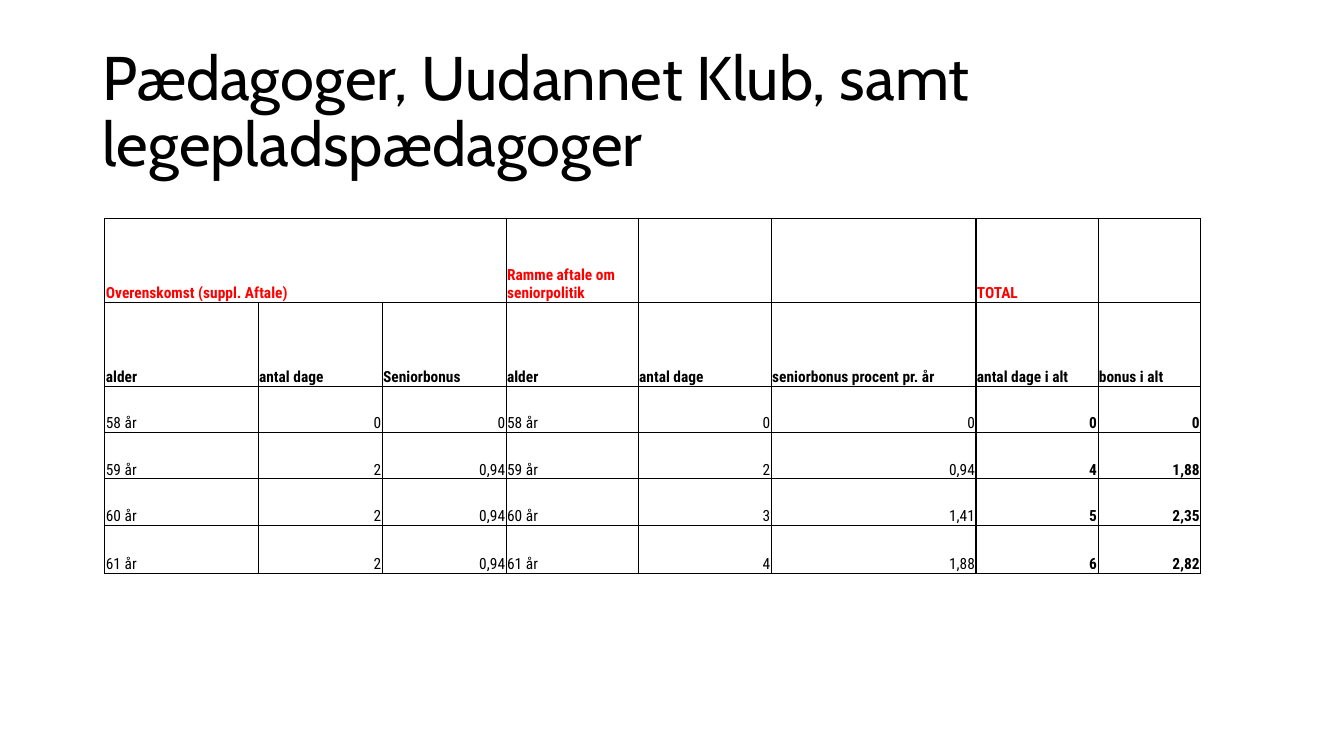
from dataclasses import dataclass

from lxml.etree import SubElement
from pptx import Presentation
from pptx.dml.color import RGBColor as RGB
from pptx.enum.text import MSO_ANCHOR as ANCHOR, PP_ALIGN as ALIGN
from pptx.oxml.ns import qn
from pptx.util import Inches, Pt


@dataclass(frozen=True)
class Theme:
    text: str = "000000"
    accent: str = "FF0000"
    border: str = "000000"
    title_font: str = "Cabin"
    body_font: str = "Roboto Condensed"
    title_size: float = 44
    body_size: float = 11
    thin: float = 0.5
    thick: float = 1


COLUMNS = [1.52, 1.23, 1.23, 1.31, 1.32, 2.03, 1.21, 1.02]
ROWS = [0.83, 0.83, 0.46, 0.46, 0.46, 0.48]
GROUP_STARTS = (0, 3, 6)
GROUP_ENDS = (2, 5, 7)
TOTAL_START = 6
AGREEMENTS = ["Overenskomst (suppl. Aftale)", "", "",
              "Ramme aftale om seniorpolitik", "", "", "TOTAL", ""]
HEADINGS = ["alder", "antal dage", "Seniorbonus",
            "alder", "antal dage", "seniorbonus procent pr. år",
            "antal dage i alt", "bonus i alt"]
SENIOR_DAYS = [
    ["58 år", "0", "0", "58 år", "0", "0", "0", "0"],
    ["59 år", "2", "0,94", "59 år", "2", "0,94", "4", "1,88"],
    ["60 år", "2", "0,94", "60 år", "3", "1,41", "5", "2,35"],
    ["61 år", "2", "0,94", "61 år", "4", "1,88", "6", "2,82"],
]


def write_text(tf, text, *, font, size, color, bold=False,
               align=ALIGN.LEFT, spacing=1.0):
    p = tf.paragraphs[0]
    p.alignment = align
    p.line_spacing = spacing
    r = p.add_run()
    r.text = text
    r.font.name = font
    r.font.size = Pt(size)
    r.font.bold = bold
    r.font.color.rgb = RGB.from_string(color)


class SlideBuilder:
    def __init__(self, slide, theme):
        self.slide = slide
        self.theme = theme

    def title(self, text, left, top, width, height):
        s = self.slide.shapes.add_textbox(
            Inches(left), Inches(top), Inches(width), Inches(height))
        tf = s.text_frame
        tf.word_wrap = True
        tf.vertical_anchor = ANCHOR.MIDDLE
        write_text(tf, text, font=self.theme.title_font,
                   size=self.theme.title_size, color=self.theme.text, spacing=0.9)

    def borders(self, cell, row, col):
        weight = {True: self.theme.thick, False: self.theme.thin}
        widths = {
            "L": weight[col in GROUP_STARTS],
            "R": weight[col in GROUP_ENDS],
            "T": weight[row == 0],
            "B": weight[row == len(ROWS) - 1],
        }
        if row == 0 and col in (1, 2):
            widths["L"] = 0
        if row == 0 and col in (0, 1):
            widths["R"] = 0
        tc_pr = cell._tc.get_or_add_tcPr()
        for side, width in widths.items():
            ln = SubElement(tc_pr, qn(f"a:ln{side}"), w=str(Pt(width)))
            if width:
                fill = SubElement(ln, qn("a:solidFill"))
                SubElement(fill, qn("a:srgbClr"), val=self.theme.border)
            else:
                SubElement(ln, qn("a:noFill"))

    def cell(self, cell, text, row, col):
        cell.margin_left = cell.margin_right = cell.margin_top = Inches(0.01)
        cell.margin_bottom = Inches(0)
        cell.vertical_anchor = ANCHOR.BOTTOM
        self.borders(cell, row, col)
        cell.fill.background()
        if text:
            number = row > 1 and col not in (0, 3)
            write_text(cell.text_frame, text, font=self.theme.body_font,
                       size=self.theme.body_size,
                       color=self.theme.accent if row == 0 else self.theme.text,
                       bold=row < 2 or col >= TOTAL_START,
                       align=ALIGN.RIGHT if number else ALIGN.LEFT)

    def table(self, data, left, top):
        s = self.slide.shapes.add_table(
            len(ROWS), len(COLUMNS), Inches(left), Inches(top),
            Inches(sum(COLUMNS)), Inches(sum(ROWS)))
        table = s.table
        table.first_row = table.horz_banding = False
        for column, width in zip(table.columns, COLUMNS):
            column.width = Inches(width)
        for row, height in zip(table.rows, ROWS):
            row.height = Inches(height)
        for i, texts in enumerate(data):
            for j, text in enumerate(texts):
                self.cell(table.cell(i, j), text, i, j)
        table.cell(0, 0).merge(table.cell(0, 1))


def main():
    prs = Presentation()
    prs.slide_width = Inches(13.33)
    prs.slide_height = Inches(7.5)
    builder = SlideBuilder(prs.slides.add_slide(prs.slide_layouts[6]), Theme())
    builder.title("Pædagoger, Uudannet Klub, samt legepladspædagoger",
                  0.92, 0.4, 11.5, 1.45)
    builder.table([AGREEMENTS, HEADINGS, *SENIOR_DAYS], 1.04, 2.17)
    prs.save("out.pptx")


if __name__ == "__main__":
    main()
